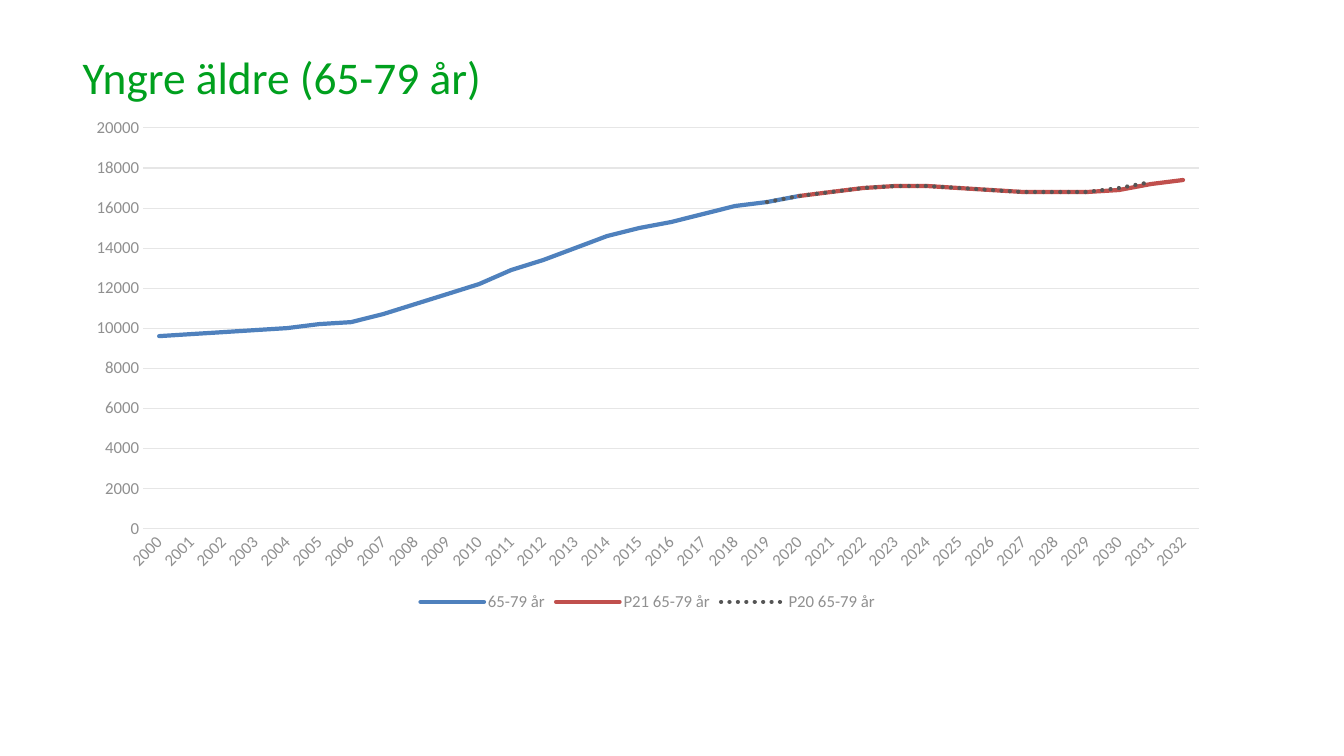
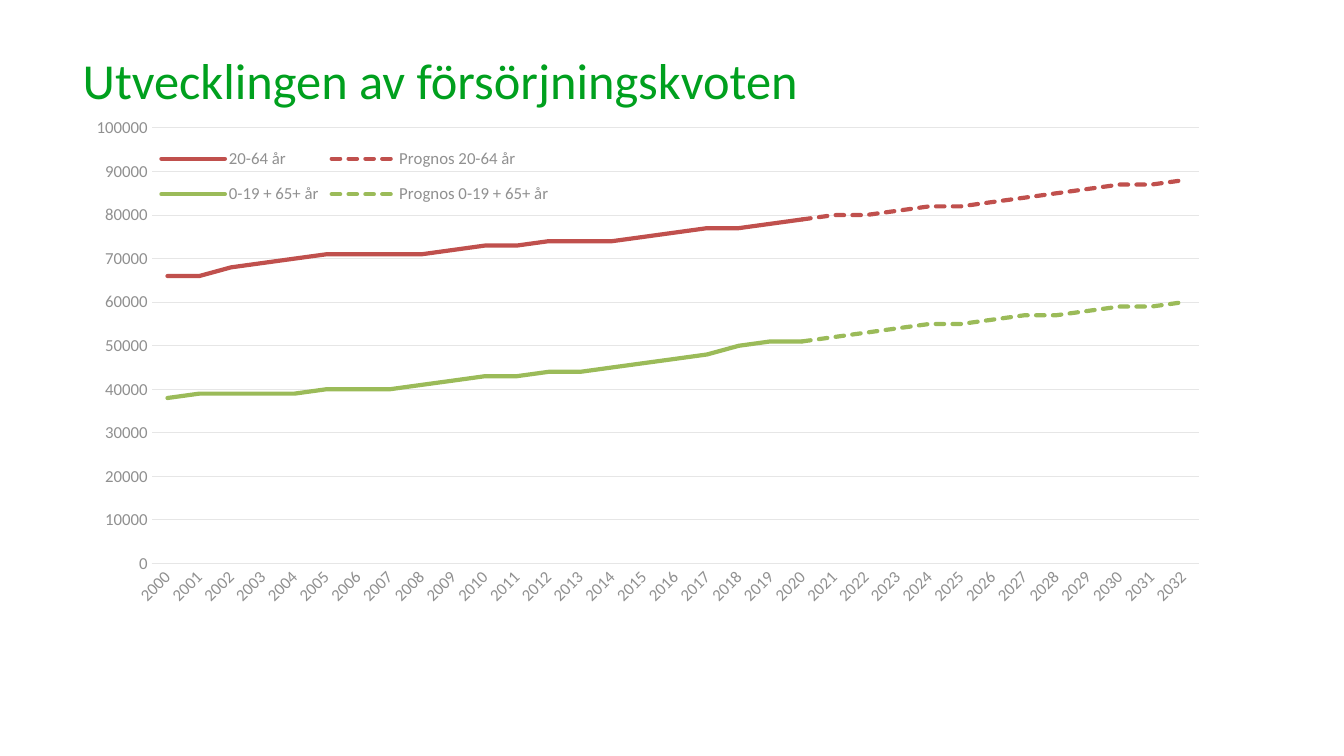
from dataclasses import dataclass

import lxml.etree
import pptx
import pptx.chart.data
import pptx.dml.color
import pptx.enum.chart
import pptx.enum.dml
import pptx.enum.text
import pptx.oxml.ns
import pptx.util

Inches = pptx.util.Inches
Pt = pptx.util.Pt
RGB = pptx.dml.color.RGBColor
Dash = pptx.enum.dml.MSO_LINE
Tick = pptx.enum.chart.XL_TICK_MARK

FACE = "Calibri"
TITLE = RGB(0x00, 0xA0, 0x1E)
LABEL = RGB(0x90, 0x90, 0x90)
GRID = RGB(0xE6, 0xE6, 0xE6)
DARK = RGB(0x55, 0x55, 0x55)
BLUE = RGB(0x4F, 0x81, 0xBD)
RED = RGB(0xC0, 0x50, 0x4D)
GREEN = RGB(0x9B, 0xBB, 0x59)

FIRST, LAST = 2000, 2032


@dataclass
class Trend:
    """A line whose values start in a given year."""
    name: str
    start: int
    vals: list[int]
    color: RGB
    dash: Dash = Dash.SOLID


@dataclass
class Page:
    title: str
    size: float
    unit: int  # the values of the trends are given in this unit
    top: int
    step: int
    trends: list[Trend]
    legend: tuple[float, ...] = ()  # x, y, w, h as shares of the chart


PAGES = [
    Page("Yngre äldre (65-79 år)", 32.4, 100, 20000, 2000, [
        Trend("65-79 år", 2000,
              [96, 97, 98, 99, 100, 102, 103, 107, 112, 117, 122, 129, 134,
               140, 146, 150, 153, 157, 161, 163, 166], BLUE),
        Trend("P21 65-79 år", 2020,
              [166, 168, 170, 171, 171, 170, 169, 168, 168, 168, 169, 172,
               174], RED),
        Trend("P20 65-79 år", 2019,
              [163, 166, 168, 170, 171, 171, 170, 169, 168, 168, 168, 170,
               173], DARK, Dash.ROUND_DOT),
    ]),
    Page("Utvecklingen av försörjningskvoten", 36, 1000, 100000, 10000, [
        Trend("20-64 år", 2000,
              [66, 66, 68, 69, 70, 71, 71, 71, 71, 72, 73, 73, 74, 74, 74,
               75, 76, 77, 77, 78, 79], RED),
        Trend("Prognos 20-64 år", 2020,
              [79, 80, 80, 81, 82, 82, 83, 84, 85, 86, 87, 87, 88],
              RED, Dash.SQUARE_DOT),
        Trend("0-19 + 65+ år", 2000,
              [38, 39, 39, 39, 39, 40, 40, 40, 41, 42, 43, 43, 44, 44, 45,
               46, 47, 48, 50, 51, 51], GREEN),
        Trend("Prognos 0-19 + 65+ år", 2020,
              [51, 52, 53, 54, 55, 55, 56, 57, 57, 58, 59, 59, 60],
              GREEN, Dash.SQUARE_DOT),
    ], (0.07, 0.05, 0.35, 0.17)),
]


def set_font(font, size: float, color: RGB) -> None:
    font.name = FACE
    font.size = Pt(size)
    font.color.rgb = color


def set_line(line, color: RGB, width: float) -> None:
    line.color.rgb = color
    line.width = Pt(width)


def add_title(slide, page: Page) -> None:
    title = slide.shapes.title
    title.left, title.top = Inches(0.72), Inches(0.42)
    title.width, title.height = Inches(11.39), Inches(0.62)
    frame = title.text_frame
    frame.text = page.title
    frame.auto_size = pptx.enum.text.MSO_AUTO_SIZE.NONE
    frame.vertical_anchor = pptx.enum.text.MSO_ANCHOR.TOP
    frame.margin_top = Inches(0.07)
    para = frame.paragraphs[0]
    para.alignment = pptx.enum.text.PP_ALIGN.LEFT
    para.space_after = Pt(6)
    set_font(para.font, page.size, TITLE)


def make_data(page: Page) -> pptx.chart.data.CategoryChartData:
    years = range(FIRST, LAST + 1)
    data = pptx.chart.data.CategoryChartData(number_format="0")
    data.categories = [str(year) for year in years]
    for trend in page.trends:
        known = {trend.start + i: val * page.unit
                 for i, val in enumerate(trend.vals)}
        data.add_series(trend.name, [known.get(year) for year in years])
    return data


def style_axes(chart, page: Page) -> None:
    years, scale = chart.category_axis, chart.value_axis
    for axis in (years, scale):
        axis.major_tick_mark = axis.minor_tick_mark = Tick.NONE
        set_font(axis.tick_labels.font, 12, LABEL)
    set_line(years.format.line, GRID, 0.75)
    for body in chart.element.xpath(".//c:catAx/c:txPr/a:bodyPr") \
            if hasattr(chart, "element") else \
            chart._chartSpace.xpath(".//c:catAx/c:txPr/a:bodyPr"):
        body.set("rot", str(-45 * 60000))
    scale.format.line.fill.background()
    scale.has_major_gridlines = True
    set_line(scale.major_gridlines.format.line, GRID, 0.75)
    scale.minimum_scale, scale.maximum_scale = 0, page.top
    scale.major_unit = page.step
    scale.tick_labels.number_format = "0"
    scale.tick_labels.number_format_is_linked = False


def style_legend(chart, place: tuple[float, ...]) -> None:
    """Put the legend below, or over the plot at a given place."""
    chart.has_legend = True
    legend = chart.legend
    legend.position = pptx.enum.chart.XL_LEGEND_POSITION.BOTTOM
    legend.include_in_layout = bool(place)
    set_font(legend.font, 12, LABEL)
    if not place:
        return
    qn = pptx.oxml.ns.qn
    root = legend._element
    for old in root.findall(qn("c:layout")):
        root.remove(old)
    layout = lxml.etree.Element(qn("c:layout"))
    manual = lxml.etree.SubElement(layout, qn("c:manualLayout"))
    pairs = [("xMode", "edge"), ("yMode", "edge"), *zip("xywh", place)]
    for tag, val in pairs:
        lxml.etree.SubElement(manual, qn(f"c:{tag}")).set("val", str(val))
    root.find(qn("c:legendPos")).addnext(layout)


def add_chart(slide, page: Page) -> None:
    chart = slide.shapes.add_chart(
        pptx.enum.chart.XL_CHART_TYPE.LINE, Inches(0.73), Inches(1.07),
        Inches(11.39), Inches(5.04), make_data(page)).chart
    chart.has_title = False
    set_font(chart.font, 10, DARK)
    plot = chart.plots[0]
    plot.vary_by_categories = False
    for line, trend in zip(plot.series, page.trends):
        line.smooth = False
        set_line(line.format.line, trend.color, 3)
        line.format.line.dash_style = trend.dash
        for stroke in line._element.xpath("c:spPr/a:ln"):
            stroke.set("cap", "rnd")
    style_axes(chart, page)
    style_legend(chart, page.legend)


def main() -> None:
    deck = pptx.Presentation()
    deck.slide_width, deck.slide_height = Inches(13.33), Inches(7.5)
    for page in PAGES:
        slide = deck.slides.add_slide(deck.slide_layouts[5])
        add_title(slide, page)
        add_chart(slide, page)
    deck.save("out.pptx")


if __name__ == "__main__":
    main()
